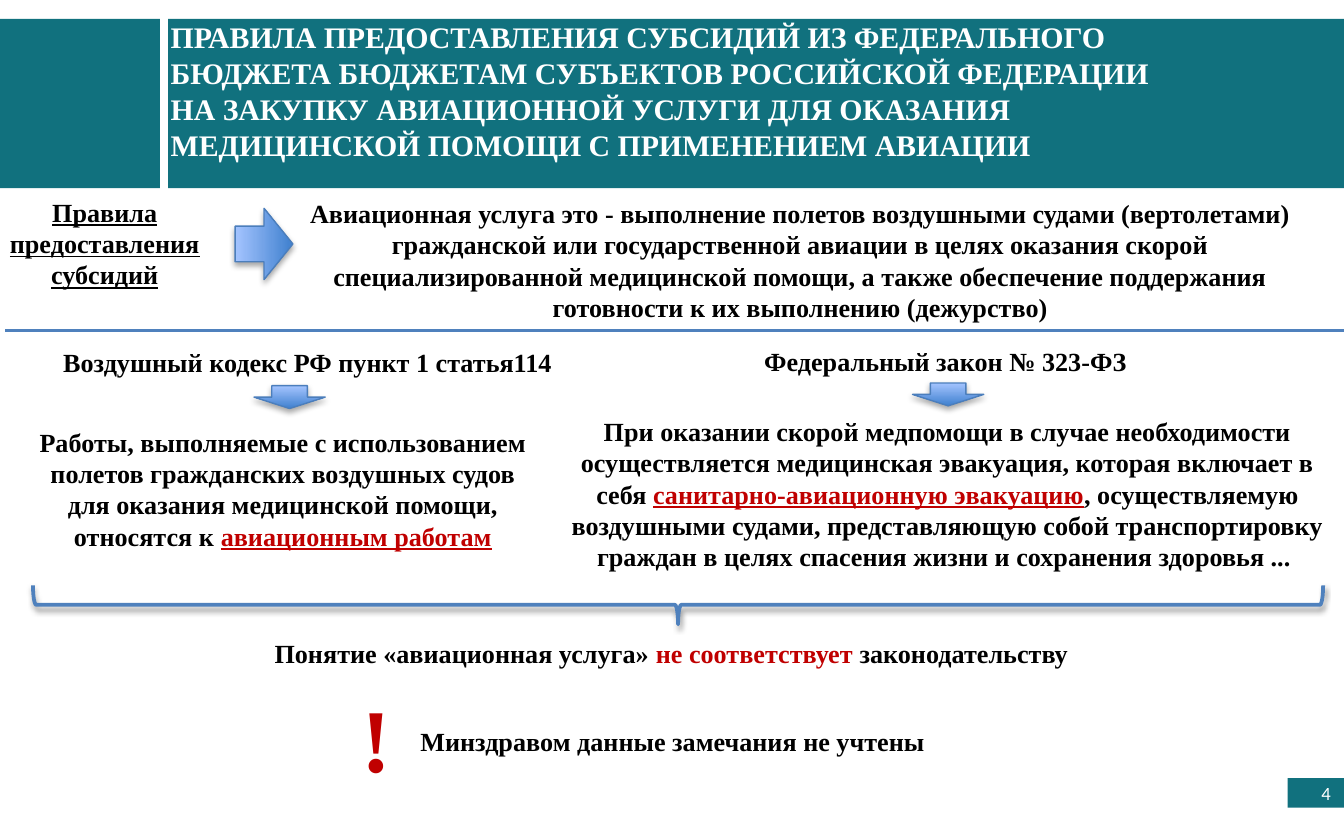
from dataclasses import dataclass

from lxml.etree import SubElement
from pptx import Presentation
from pptx.dml.color import RGBColor
from pptx.enum.shapes import MSO_CONNECTOR, MSO_SHAPE
from pptx.enum.text import MSO_ANCHOR, PP_ALIGN
from pptx.oxml.ns import qn
from pptx.util import Emu, Pt

SCALE = 9144  # EMU in one px, 100 px to the inch


@dataclass(frozen=True)
class Theme:
    font: str = "Times New Roman"
    plain: str = "Calibri"
    teal: str = "11717E"
    white: str = "FFFFFF"
    black: str = "000000"
    red: str = "C00000"
    blue: str = "4F81BD"
    edge: str = "4B7EBC"
    dark: str = "3F80CE"
    light: str = "A4C4FF"
    head: int = 16
    body: int = 14
    mark: int = 48
    page: int = 10


THEME = Theme()


def px(num):
    return Emu(num * SCALE)


def tint(code):
    return RGBColor.from_string(code)


def write(shape, *runs, size=THEME.body, color=THEME.black, font=THEME.font,
          bold=True, under=False, align=PP_ALIGN.CENTER,
          anchor=MSO_ANCHOR.TOP, wrap=True):
    """Fill a shape with runs; a (text, color, underline) run has its own look."""
    frame = shape.text_frame
    frame.word_wrap = wrap
    frame.vertical_anchor = anchor
    para = frame.paragraphs[0]
    para.alignment = align
    for item in runs:
        text, hue, line = (item, color, under) if isinstance(item, str) else item
        run = para.add_run()
        run.text = text
        face = run.font
        face.name, face.size, face.bold = font, Pt(size), bold
        face.underline = line
        face.color.rgb = tint(hue)


def label(slide, box, *runs, **look):
    shape = slide.shapes.add_textbox(*map(px, box))
    write(shape, *runs, **look)


def band(slide, box):
    shape = slide.shapes.add_shape(MSO_SHAPE.RECTANGLE, *map(px, box))
    shape.shadow.inherit = False
    shape.fill.solid()
    shape.fill.fore_color.rgb = tint(THEME.teal)
    shape.line.fill.background()
    return shape


def shade(shape, alpha, dist):
    """Cast a soft shadow straight down."""
    shape.shadow.inherit = False
    root = shape.element.spPr.find(qn("a:effectLst"))
    cast = SubElement(root, qn("a:outerShdw"), blurRad="40000",
                      dist=str(dist), dir="5400000", rotWithShape="0")
    hue = SubElement(cast, qn("a:srgbClr"), val=THEME.black)
    SubElement(hue, qn("a:alpha"), val=str(alpha * 1000))


def arrow(slide, box, turn=0):
    shape = slide.shapes.add_shape(MSO_SHAPE.DOWN_ARROW, *map(px, box))
    shape.rotation = turn
    shape.fill.gradient()
    shape.fill.gradient_angle = 90
    for stop, hue in zip(shape.fill.gradient_stops, (THEME.dark, THEME.light)):
        stop.color.rgb = tint(hue)
    for stop, place in zip(shape.fill.gradient_stops, (0, 1)):
        stop.position = place
    shape.line.color.rgb = tint(THEME.edge)
    shape.line.width = Pt(0.75)
    shade(shape, 35, 23000)


def brace(slide, box):
    shape = slide.shapes.add_shape(MSO_SHAPE.RIGHT_BRACE, *map(px, box))
    shape.rotation = 90
    shape.fill.background()
    shape.line.color.rgb = tint(THEME.blue)
    shape.line.width = Pt(2)
    shade(shape, 38, 20000)


def rule(slide, left, right, top):
    line = slide.shapes.add_connector(
        MSO_CONNECTOR.STRAIGHT, px(left), px(top), px(right), px(top))
    line.line.color.rgb = tint(THEME.blue)
    line.line.width = Pt(2)
    SubElement(line.element.spPr, qn("a:effectLst"))


def title(slide, box, text):
    shape = slide.shapes.title
    shape.left, shape.top, shape.width, shape.height = map(px, box)
    write(shape, text, size=THEME.head, color=THEME.white, align=PP_ALIGN.LEFT)
    # Bring the title in front of the bands
    slide.shapes._spTree.append(shape.element)


def main():
    deck = Presentation()
    deck.slide_width, deck.slide_height = px(1000), px(625)
    slide = deck.slides.add_slide(deck.slide_layouts[5])

    # Header bands and title
    band(slide, (125, 14, 875, 126))
    band(slide, (0, 14, 119, 126))
    title(slide, (117, 9, 773, 118),
          "ПРАВИЛА ПРЕДОСТАВЛЕНИЯ СУБСИДИЙ ИЗ ФЕДЕРАЛЬНОГО БЮДЖЕТА БЮДЖЕТАМ "
          "СУБЪЕКТОВ РОССИЙСКОЙ ФЕДЕРАЦИИ НА ЗАКУПКУ АВИАЦИОННОЙ УСЛУГИ ДЛЯ "
          "ОКАЗАНИЯ МЕДИЦИНСКОЙ ПОМОЩИ С ПРИМЕНЕНИЕМ АВИАЦИИ")

    # Definition from the rules
    label(slide, (-19, 141, 194, 81), "Правила предоставления субсидий",
          under=True)
    arrow(slide, (170, 160, 53, 43), turn=270)
    label(slide, (202, 142, 787, 104),
          "Авиационная услуга это - выполнение полетов воздушными судами "
          "(вертолетами) гражданской или государственной авиации в целях "
          "оказания скорой специализированной медицинской помощи, а также "
          "обеспечение поддержания готовности к их выполнению (дежурство)")
    rule(slide, 4, 1004, 246)

    # Air code
    label(slide, (36, 253, 386, 34), "Воздушный кодекс РФ пункт 1 статья114 ")
    arrow(slide, (189, 287, 53, 17))
    label(slide, (11, 312, 399, 105),
          "Работы, выполняемые с использованием полетов гражданских воздушных "
          "судов для оказания медицинской помощи, относятся к ",
          ("авиационным работам", THEME.red, True))

    # Federal law
    label(slide, (536, 252, 340, 34), "Федеральный закон № 323-ФЗ ")
    arrow(slide, (679, 285, 53, 17))
    label(slide, (410, 304, 590, 128),
          "При оказании скорой медпомощи в случае необходимости осуществляется "
          "медицинская эвакуация, которая включает в себя ",
          ("санитарно-авиационную эвакуацию", THEME.red, True),
          ", осуществляемую воздушными судами, представляющую собой "
          "транспортировку граждан в целях спасения жизни и сохранения "
          "здоровья ... ")

    # Conclusion
    brace(slide, (490, -30, 29, 960))
    label(slide, (20, 469, 959, 34), "Понятие «авиационная услуга» ",
          ("не соответствует", THEME.red, False), " законодательству")
    label(slide, (259, 503, 43, 91), "!", size=THEME.mark, color=THEME.red,
          align=PP_ALIGN.LEFT, wrap=False)
    label(slide, (148, 535, 705, 34), "Минздравом данные замечания не учтены")

    # Page number
    write(band(slide, (958, 579, 42, 22)), "4", size=THEME.page,
          color=THEME.white, font=THEME.plain, bold=False,
          align=PP_ALIGN.RIGHT, anchor=MSO_ANCHOR.MIDDLE)

    deck.save("out.pptx")


if __name__ == "__main__":
    main()
